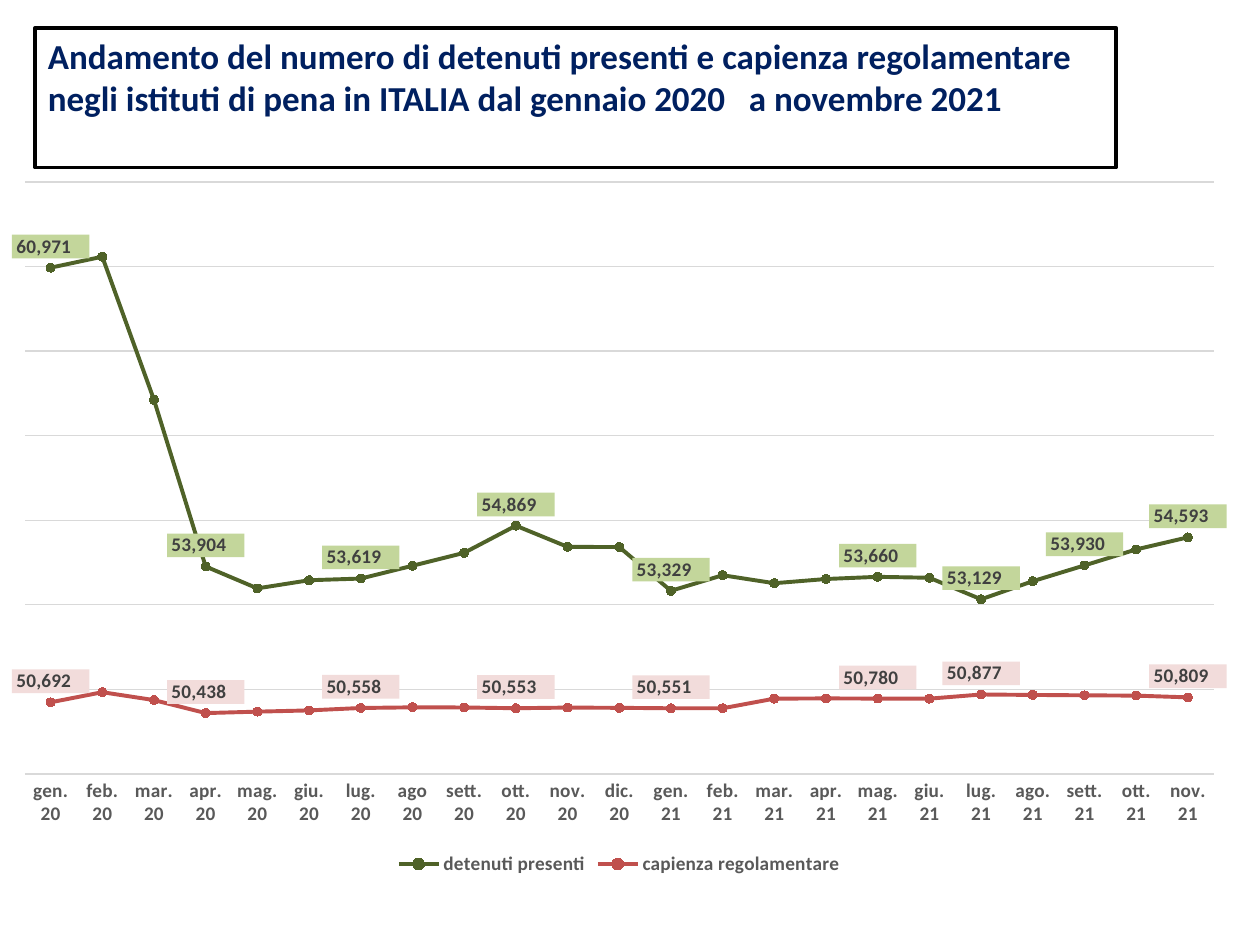
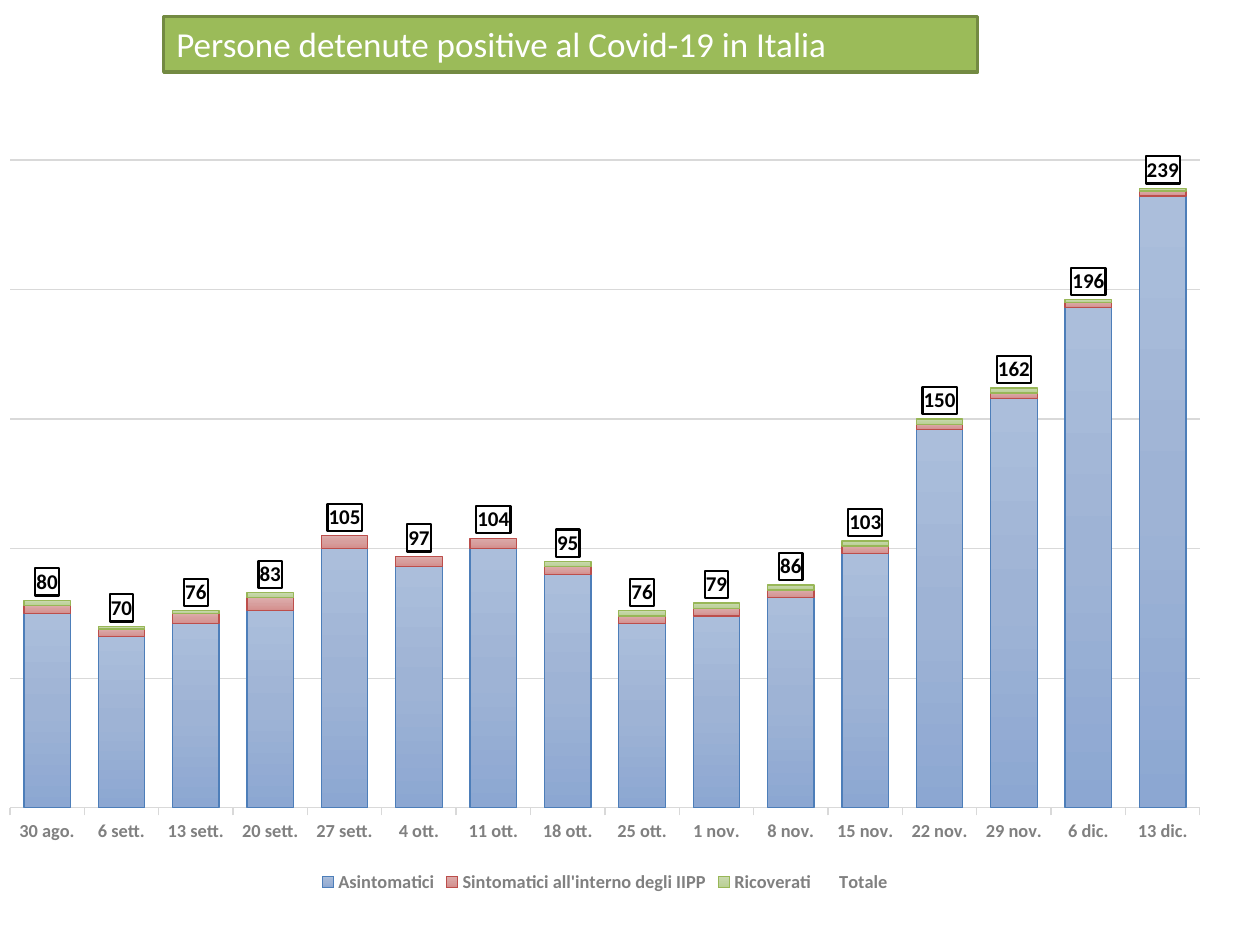
"""Build two slides on the Italian prison population and its Covid-19 cases."""
from pptx import Presentation
from pptx import oxml
from pptx.chart.data import CategoryChartData
from pptx.dml.color import RGBColor
from pptx.enum import chart as charts, text
from pptx.oxml import ns
from pptx.util import Cm, Pt

FONT = "Calibri"
COLORS = {
    "white": "FFFFFF", "black": "000000", "navy": "002060",
    "grid": "D9D9D9", "axis": "595959", "grey": "808080", "label": "404040",
    "banner": "9BBB59", "banner_edge": "738A42",
    "present": "4F6228", "present_label": "C3D69B", "present_marker": "4F81BD",
    "capacity": "C0504D", "capacity_label": "F2DCDB", "capacity_marker": "FF0000",
    "blue_edge": "4D7EB9", "red_edge": "BC4E4B", "green_edge": "98B757",
}
RGB = {name: RGBColor.from_string(value) for name, value in COLORS.items()}
GRADIENTS = {
    "blue_edge": ("ABBEDB", "9EB3D5", "8CA7D2"),
    "red_edge": ("DDACAB", "D79E9D", "D48D8B"),
    "green_edge": ("CADAAF", "C1D4A2", "B9D091"),
}
NUMBER_FORMAT = '_-* #,##0\\ _€_-;\\-* #,##0\\ _€_-;_-* "-"?'


def format_title(page, wording, place, fill, edge, color, bold):
    """Fill, place and frame the title placeholder."""
    box = page.shapes.title
    box.left, box.top, box.width, box.height = map(Cm, place)
    box.fill.solid()
    box.fill.fore_color.rgb = RGB[fill]
    box.line.color.rgb = RGB[edge]
    box.line.width = Pt(2)
    frame = box.text_frame
    frame.text = wording
    frame.word_wrap = True
    frame.auto_size = text.MSO_AUTO_SIZE.NONE
    frame.vertical_anchor = text.MSO_ANCHOR.TOP
    para = frame.paragraphs[0]
    para.alignment = text.PP_ALIGN.LEFT
    span = para.runs[0]
    span.font.name, span.font.size, span.font.bold = FONT, Pt(20), bold
    span.font.color.rgb = RGB[color]


def add_styled_chart(page, kind, place, months, rows, size, color, scale, plot_height):
    """Add a chart with hidden value axis, light grid and bottom legend."""
    data = CategoryChartData()
    data.categories = months
    for name, values in rows:
        data.add_series(name, values)
    chart = page.shapes.add_chart(kind, *map(Cm, place), data).chart
    chart.has_title = False
    chart.font.name, chart.font.size = FONT, Pt(size)
    chart.has_legend = True
    chart.legend.position = charts.XL_LEGEND_POSITION.BOTTOM
    chart.legend.include_in_layout = False
    value_axis, category_axis = chart.value_axis, chart.category_axis
    value_axis.visible = False
    value_axis.minimum_scale, value_axis.maximum_scale, value_axis.major_unit = scale
    value_axis.has_major_gridlines = True
    for line in (value_axis.major_gridlines.format.line, category_axis.format.line):
        line.color.rgb = RGB["grid"]
        line.width = Pt(0.75)
    for font in (chart.legend.font, category_axis.tick_labels.font):
        font.name, font.size, font.bold = FONT, Pt(size), True
        font.color.rgb = RGB[color]
    plot_area = chart._chartSpace.chart.plotArea
    for layout in plot_area.findall(ns.qn("c:layout")):
        plot_area.remove(layout)
    plot_area.insert(0, oxml.parse_xml(
        f'<c:layout {ns.nsdecls("c")}><c:manualLayout><c:layoutTarget val="inner"/>'
        '<c:xMode val="edge"/><c:yMode val="edge"/><c:x val="0.02"/><c:y val="0.02"/>'
        f'<c:w val="0.96"/><c:h val="{plot_height}"/></c:manualLayout></c:layout>'))
    return chart


deck = Presentation()
deck.slide_width, deck.slide_height = Cm(25.4), Cm(19.05)
title_only = deck.slide_layouts[5]

page = deck.slides.add_slide(title_only)
format_title(
    page,
    "Andamento del numero di detenuti presenti e capienza regolamentare negli istituti "
    "di pena in ITALIA dal gennaio 2020   a novembre 2021",
    (0.71, 0.56, 21.79, 2.82), "white", "black", "navy", True)
months = [
    "gen. 20", "feb. 20", "mar. 20", "apr. 20", "mag. 20", "giu. 20", "lug. 20", "ago 20",
    "sett. 20", "ott. 20", "nov. 20", "dic. 20", "gen. 21", "feb. 21", "mar. 21", "apr. 21",
    "mag. 21", "giu. 21", "lug. 21", "ago. 21", "sett. 21", "ott. 21", "nov. 21"]
population = [
    ("detenuti presenti", [
        60971, 61230, 57846, 53904, 53387, 53579, 53619, 53921, 54227, 54869, 54368, 54364,
        53329, 53697, 53509, 53608, 53660, 53637, 53129, 53557, 53930, 54307, 54593]),
    ("capienza regolamentare", [
        50692, 50931, 50745, 50438, 50472, 50501, 50558, 50574, 50570, 50553, 50568, 50562,
        50551, 50551, 50779, 50785, 50780, 50779, 50877, 50867, 50857, 50851, 50809])]
chart = add_styled_chart(
    page, charts.XL_CHART_TYPE.LINE_MARKERS, (0, 3.38, 24.97, 14.38), months, population,
    11, "axis", (49000, 63000, 2000), 0.83)
chart.font.bold = True
chart.category_axis.major_tick_mark = charts.XL_TICK_MARK.NONE
chart.value_axis.tick_labels.number_format = NUMBER_FORMAT
chart.value_axis.tick_labels.number_format_is_linked = False
labelled = {
    "present": {0, 3, 6, 9, 12, 16, 18, 20, 22},
    "capacity": {0, 3, 6, 9, 12, 16, 18, 22},
}
for series, (key, shown) in zip(chart.plots[0].series, labelled.items()):
    series.smooth = False
    series.format.line.color.rgb = RGB[key]
    series.format.line.width = Pt(2.25)
    marker = series.marker
    marker.style, marker.size = charts.XL_MARKER_STYLE.CIRCLE, 5
    marker.format.fill.solid()
    marker.format.fill.fore_color.rgb = RGB[f"{key}_marker"]
    marker.format.line.color.rgb = RGB[key]
    labels = series.data_labels
    labels.show_value = True
    labels.number_format, labels.number_format_is_linked = NUMBER_FORMAT, False
    labels.position = charts.XL_LABEL_POSITION.ABOVE
    labels.font.name, labels.font.size, labels.font.bold = FONT, Pt(11), True
    labels.font.color.rgb = RGB["label"]
    labels._element.find(ns.qn("c:txPr")).addprevious(oxml.parse_xml(
        f'<c:spPr {ns.nsdecls("c", "a")}><a:solidFill>'
        f'<a:srgbClr val="{COLORS[key + "_label"]}"/></a:solidFill></c:spPr>'))
    hidden = [index for index in range(len(months)) if index not in shown]
    for place, index in enumerate(hidden):
        labels._element.insert(place, oxml.parse_xml(
            f'<c:dLbl {ns.nsdecls("c")}><c:idx val="{index}"/><c:delete val="1"/></c:dLbl>'))

page = deck.slides.add_slide(title_only)
format_title(page, "Persone detenute positive al Covid-19 in Italia",
             (3.3, 0.33, 16.41, 1.12), "banner", "banner_edge", "white", False)
days = ["30 ago.", "6 sett.", "13 sett.", "20 sett.", "27 sett.", "4 ott.", "11 ott.", "18 ott.",
        "25 ott.", "1 nov.", "8 nov.", "15 nov.", "22 nov.", "29 nov.", "6 dic.", "13 dic."]
cases = [
    ("Asintomatici", [75, 66, 71, 76, 100, 93, 100, 90, 71, 74, 81, 98, 146, 158, 193, 236]),
    ("Sintomatici all'interno degli IIPP", [3, 3, 4, 5, 5, 4, 4, 3, 3, 3, 3, 3, 2, 2, 2, 2]),
    ("Ricoverati", [2, 1, 1, 2, 0, 0, 0, 2, 2, 2, 2, 2, 2, 2, 1, 1])]
totals = [sum(counts) for counts in zip(*(values for name, values in cases))]
chart = add_styled_chart(
    page, charts.XL_CHART_TYPE.COLUMN_STACKED, (-0.3, 2.92, 24.99, 15.19), days,
    cases + [("Totale", totals)], 10.5, "grey", (0, 250, 50), 0.86)
chart.category_axis.major_tick_mark = charts.XL_TICK_MARK.OUTSIDE
plot = chart.plots[0]
plot.vary_by_categories = False
plot.gap_width, plot.overlap = 60, 100
*parts, total = plot.series
for series, (edge, stops) in zip(parts, GRADIENTS.items()):
    stop_list = "".join(
        f'<a:gs pos="{index * 50000}"><a:srgbClr val="{stop}"/></a:gs>'
        for index, stop in enumerate(stops))
    series.format.line.color.rgb = RGB[edge]
    series.format.line.width = Pt(0.75)
    series._element.get_or_add_spPr().insert(0, oxml.parse_xml(
        f'<a:gradFill {ns.nsdecls("a")}><a:gsLst>{stop_list}</a:gsLst>'
        '<a:lin ang="5400000" scaled="0"/></a:gradFill>'))
total.format.fill.background()
total.format.line.fill.background()
labels = total.data_labels
labels.show_value = True
labels.position = charts.XL_LABEL_POSITION.INSIDE_BASE
labels.font.name, labels.font.size, labels.font.bold = FONT, Pt(12), True
labels.font.color.rgb = RGB["black"]
labels._element.find(ns.qn("c:txPr")).addprevious(oxml.parse_xml(
    f'<c:spPr {ns.nsdecls("c", "a")}><a:solidFill><a:srgbClr val="{COLORS["white"]}"/></a:solidFill>'
    f'<a:ln w="15875"><a:solidFill><a:srgbClr val="{COLORS["black"]}"/></a:solidFill></a:ln></c:spPr>'))

deck.save("out.pptx")
